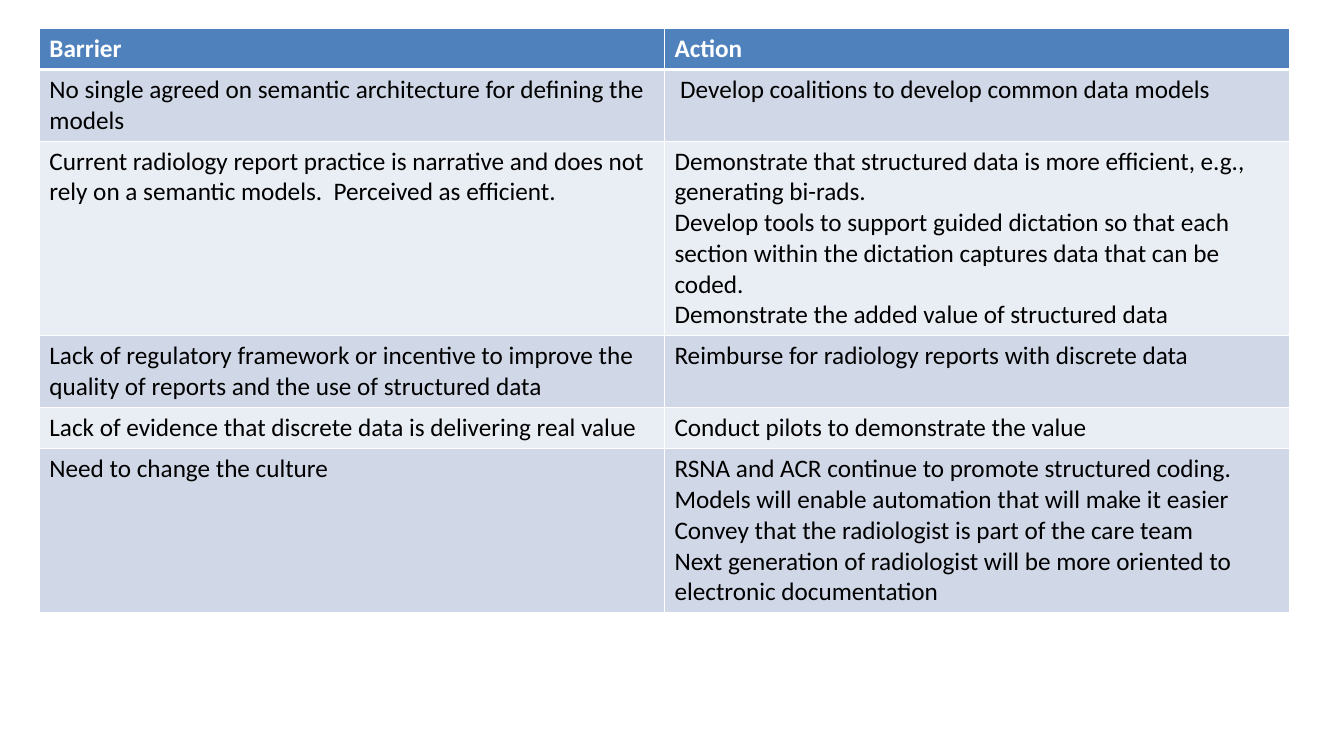
import pptx
import pptx.dml.color
import pptx.oxml
import pptx.oxml.ns
import pptx.util

THEME = {
    "font": "Calibri",
    "size": 18,
    "header_fill": "4F81BD",
    "band_fills": ["D0D8E8", "E9EDF4"],
    "header_text": "FFFFFF",
    "body_text": "000000",
    "border": "FFFFFF",
    "border_pt": 1,
    "header_rule_pt": 3,
}

ROWS = [
    (["Barrier"], ["Action"]),
    (["No single agreed on semantic architecture for defining the models"],
     [" Develop coalitions to develop common data models"]),
    (["Current radiology report practice is narrative and does not rely on a "
      "semantic models.  Perceived as efficient."],
     ["Demonstrate that structured data is more efficient, e.g., generating bi-rads.",
      "Develop tools to support guided dictation so that each section within the "
      "dictation captures data that can be coded.",
      "Demonstrate the added value of structured data"]),
    (["Lack of regulatory framework or incentive to improve the quality of reports "
      "and the use of structured data"],
     ["Reimburse for radiology reports with discrete data"]),
    (["Lack of evidence that discrete data is delivering real value"],
     ["Conduct pilots to demonstrate the value"]),
    (["Need to change the culture"],
     ["RSNA and ACR continue to promote structured coding.",
      "Models will enable automation that will make it easier",
      "Convey that the radiologist is part of the care team",
      "Next generation of radiologist will be more oriented to electronic documentation"]),
]


def rgb(value):
    return pptx.dml.color.RGBColor.from_string(value)


def set_borders(cell, widths):
    """Draw solid cell borders; widths maps a side (L, R, T, B) to points."""
    # Borders must come before the fill in the cell properties.
    for i, (side, width) in enumerate(widths.items()):
        line = pptx.oxml.parse_xml(
            f'<a:ln{side} {pptx.oxml.ns.nsdecls("a")} w="{pptx.util.Pt(width)}">'
            f'<a:solidFill><a:srgbClr val="{THEME["border"]}"/></a:solidFill>'
            f'</a:ln{side}>')
        cell._tc.get_or_add_tcPr().insert(i, line)


prs = pptx.Presentation()
prs.slide_width = pptx.util.Inches(13.33)
prs.slide_height = pptx.util.Inches(7.5)
s = prs.slides.add_slide(prs.slide_layouts[6])

left, top = pptx.util.Inches(0.39), pptx.util.Inches(0.28)
col_width, row_height = pptx.util.Inches(6.2), pptx.util.Inches(0.41)
n_cols = len(ROWS[0])
table = s.shapes.add_table(len(ROWS), n_cols, left, top,
                           n_cols * col_width, len(ROWS) * row_height).table

for i, row in enumerate(ROWS):
    header = i == 0
    fill = THEME["header_fill"] if header else THEME["band_fills"][(i - 1) % 2]
    color = THEME["header_text"] if header else THEME["body_text"]
    font = {"name": THEME["font"], "size": pptx.util.Pt(THEME["size"]), "bold": header}
    widths = dict.fromkeys("LRTB", THEME["border_pt"])
    if header:
        widths["B"] = THEME["header_rule_pt"]
    elif i == 1:
        widths["T"] = THEME["header_rule_pt"]
    for j, lines in enumerate(row):
        cell = table.cell(i, j)
        cell.fill.solid()
        cell.fill.fore_color.rgb = rgb(fill)
        set_borders(cell, widths)
        tf = cell.text_frame
        for k, text in enumerate(lines):
            p = tf.add_paragraph() if k else tf.paragraphs[0]
            r = p.add_run()
            r.text = text
            for name, value in font.items():
                setattr(r.font, name, value)
            r.font.color.rgb = rgb(color)

prs.save("out.pptx")
